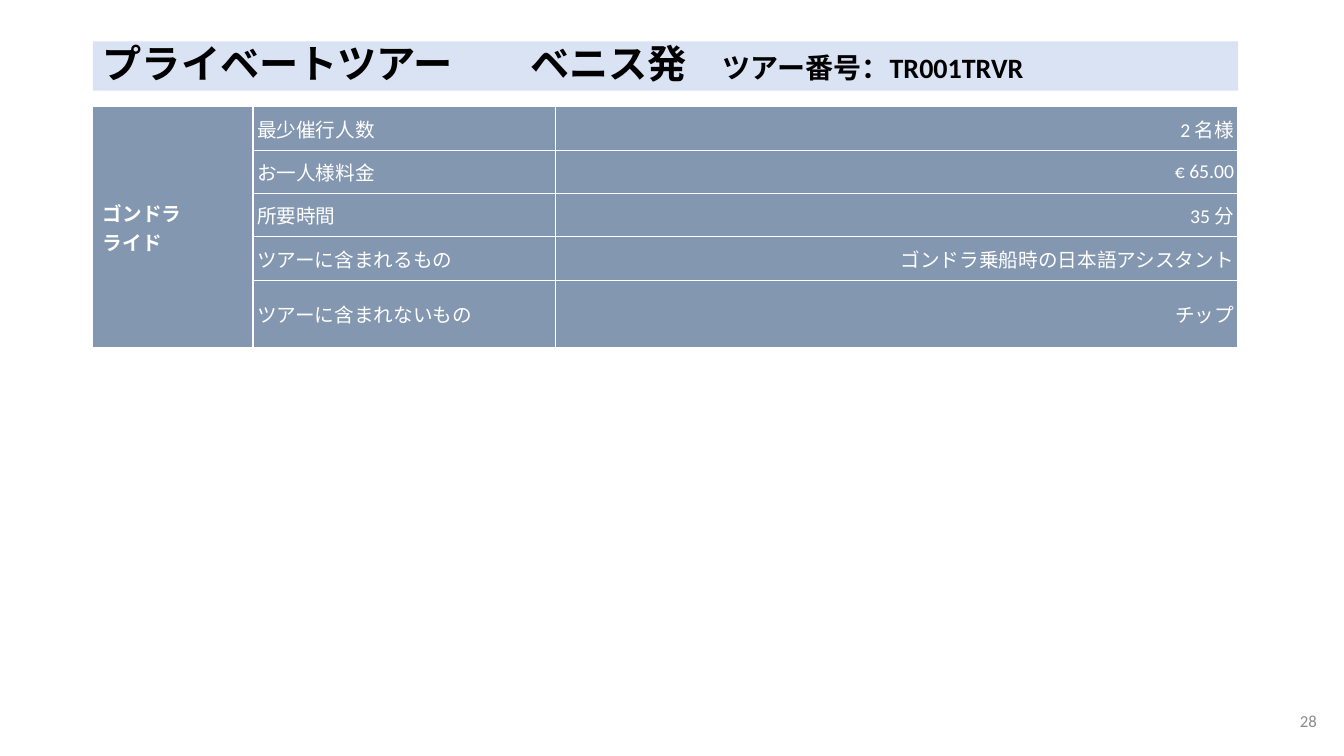
from dataclasses import dataclass

from lxml import etree
from pptx import Presentation
from pptx.dml.color import RGBColor
from pptx.enum import text as txt
from pptx.oxml import ns
from pptx.util import Inches, Pt


@dataclass(frozen=True)
class Theme:
    font: str = "Calibri"
    band: str = "DAE3F3"
    cell: str = "8497B0"
    ink: str = "000000"
    light: str = "FFFFFF"
    grey: str = "8C8C8C"
    title: int = 28
    code: int = 20
    body: int = 14
    number: int = 12


theme = Theme()


def add_run(paragraph, words, size, color, bold=False):
    run = paragraph.add_run()
    run.text = words
    for key, value in {"name": theme.font, "size": Pt(size), "bold": bold}.items():
        setattr(run.font, key, value)
    run.font.color.rgb = RGBColor.from_string(color)


def add_borders(cell):
    """Draw a thin light line on all four sides; call before the cell is filled."""
    properties = cell._tc.get_or_add_tcPr()
    for side in ("a:lnL", "a:lnR", "a:lnT", "a:lnB"):
        line = etree.SubElement(properties, ns.qn(side), w=str(Pt(1)))
        fill = etree.SubElement(line, ns.qn("a:solidFill"))
        etree.SubElement(fill, ns.qn("a:srgbClr"), val=theme.light)


prs = Presentation()
prs.slide_width, prs.slide_height = Inches(13.33), Inches(7.5)
slide = prs.slides.add_slide(prs.slide_layouts[5])

left, width = Inches(0.92), Inches(11.36)

# Title band: tour type, departure city and tour number on tab stops
title = slide.shapes.title
for key, value in {"left": left, "top": Inches(0.41),
                   "width": width, "height": Inches(0.49)}.items():
    setattr(title, key, value)
title.fill.solid()
title.fill.fore_color.rgb = RGBColor.from_string(theme.band)
for key, value in {"auto_size": txt.MSO_AUTO_SIZE.NONE, "word_wrap": True,
                   "vertical_anchor": txt.MSO_ANCHOR.MIDDLE}.items():
    setattr(title.text_frame, key, value)
heading = title.text_frame.paragraphs[0]
heading.alignment = txt.PP_ALIGN.LEFT
heading.line_spacing = 0.9
tabs = etree.SubElement(heading._p.get_or_add_pPr(), ns.qn("a:tabLst"))
for stop in (4.24, 6.15):
    etree.SubElement(tabs, ns.qn("a:tab"), pos=str(Inches(stop)), algn="l")
add_run(heading, "プライベートツアー\tベニス発\t", theme.title, theme.ink, True)
add_run(heading, "ツアー番号：TR001TRVR", theme.code, theme.ink, True)

# Tour details
tour_name = ("ゴンドラ", "ライド")
details = [
    ("最少催行人数", "2 名様"),
    ("お一人様料金", "€ 65.00"),
    ("所要時間", "35 分"),
    ("ツアーに含まれるもの", "ゴンドラ乗船時の日本語アシスタント"),
    ("ツアーに含まれないもの", "チップ"),
]
column_widths = (1.59, 3, 6.77)
row_heights = [0.43] * 4 + [0.66]

tour = slide.shapes.add_table(len(details), len(column_widths), left, Inches(1.06),
                              width, Inches(sum(row_heights))).table
tour.first_row = tour.horz_banding = False
for column, inches in zip(tour.columns, column_widths):
    column.width = Inches(inches)
for row, inches in zip(tour.rows, row_heights):
    row.height = Inches(inches)

for cell in tour.iter_cells():
    add_borders(cell)
    cell.fill.solid()
    cell.fill.fore_color.rgb = RGBColor.from_string(theme.cell)
    cell.vertical_anchor = txt.MSO_ANCHOR.MIDDLE

name_cell = tour.cell(0, 0)
name_cell.merge(tour.cell(len(details) - 1, 0))
name_lines = name_cell.text_frame
add_run(name_lines.paragraphs[0], tour_name[0], theme.body, theme.light, True)
add_run(name_lines.add_paragraph(), tour_name[1], theme.body, theme.light, True)

alignments = (txt.PP_ALIGN.LEFT, txt.PP_ALIGN.RIGHT)
for row_index, detail in enumerate(details):
    for column_index, (words, alignment) in enumerate(zip(detail, alignments), 1):
        cell = tour.cell(row_index, column_index)
        for side in ("left", "right", "top", "bottom"):
            setattr(cell, f"margin_{side}", Inches(0.04))
        paragraph = cell.text_frame.paragraphs[0]
        paragraph.alignment = alignment
        add_run(paragraph, words, theme.body, theme.light)

# Page number
page_frame = slide.shapes.add_textbox(Inches(10.16), Inches(6.95),
                                      Inches(3), Inches(0.4)).text_frame
page_frame.word_wrap = True
page_frame.vertical_anchor = txt.MSO_ANCHOR.MIDDLE
page_number = page_frame.paragraphs[0]
page_number.alignment = txt.PP_ALIGN.RIGHT
add_run(page_number, "28", theme.number, theme.grey)

prs.save("out.pptx")
